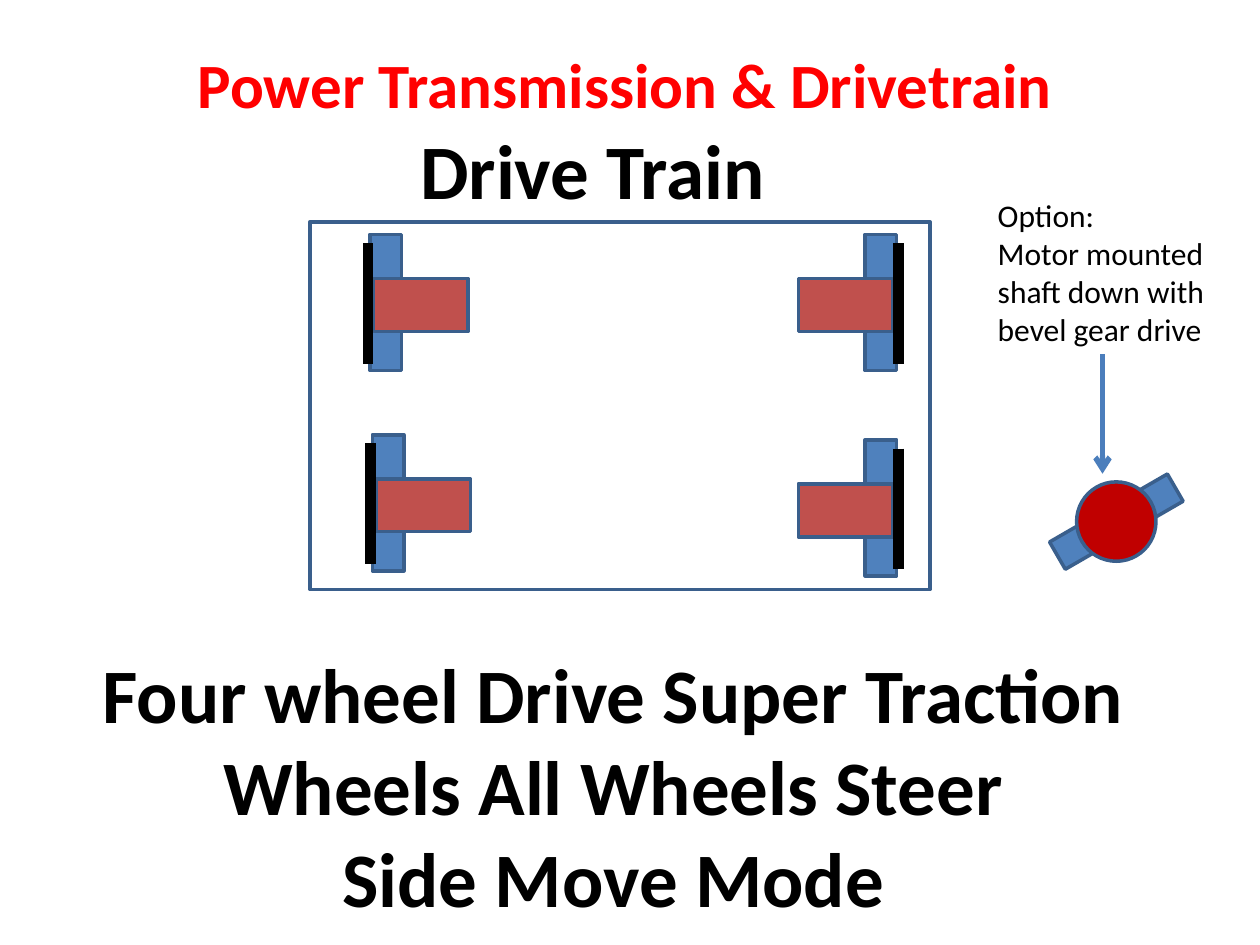
from pptx import Presentation
from pptx.dml.color import RGBColor
from pptx.enum.shapes import MSO_CONNECTOR as Line, MSO_SHAPE as Kind
from pptx.enum.text import MSO_ANCHOR as Anchor, PP_ALIGN as Align
from pptx.oxml.ns import qn
from pptx.util import Inches, Pt
from lxml import etree

COLORS = {"title": "FF0000", "text": "000000", "edge": "3A5F8C", "wheel": "4F81BD",
          "motor": "C0504D", "gear": "C00000", "bar": "000000", "arrow": "4B7EBC"}
WHEEL = (1.08, 0.25)
MOTOR = (0.42, 0.75)


def rgb(name):
    return RGBColor.from_string(COLORS[name])


def write(frame, lines, size, color="text", bold=True, align=Align.CENTER):
    frame.word_wrap = True
    frame.text = "\n".join(lines)
    for par in frame.paragraphs:
        par.alignment = align
        font = par.font
        font.name, font.size, font.bold = "Calibri", Pt(size), bold
        font.color.rgb = rgb(color)


def add_text(slide, box, lines, size, **style):
    text = slide.shapes.add_textbox(*map(Inches, box))
    write(text.text_frame, lines, size, **style)


def add_title(slide, box, text):
    title = slide.shapes.title
    title.left, title.top, title.width, title.height = map(Inches, box)
    write(title.text_frame, [text], 36, color="title")
    title.text_frame.vertical_anchor = Anchor.MIDDLE


def add_part(shapes, kind, mid, size, fill=None, turn=0):
    """Draw an outlined shape centred on mid, turned by degrees."""
    (x, y), (w, h) = mid, size
    part = shapes.add_shape(kind, *map(Inches, (x - w / 2, y - h / 2, w, h)))
    part.rotation = turn
    part.shadow.inherit = False
    part.line.color.rgb = rgb("edge")
    part.line.width = Pt(2)
    if fill:
        part.fill.solid()
        part.fill.fore_color.rgb = rgb(fill)
    else:
        part.fill.background()


def add_line(shapes, x, top, end, color, width, head=False):
    line = shapes.add_connector(Line.STRAIGHT, *map(Inches, (x, top, x, end)))
    line.line.color.rgb = rgb(color)
    line.line.width = Pt(width)
    if head:
        etree.SubElement(line.line._get_or_add_ln(), qn("a:tailEnd"), type="arrow")
    etree.SubElement(line._element.spPr, qn("a:effectLst"))


def add_drive(slide, x, y, side):
    """Group wheel, motor and bar; x is the bar, side 1 points the motor right."""
    shapes = slide.shapes.add_group_shape().shapes
    turn = 270 if side > 0 else 90
    add_part(shapes, Kind.RECTANGLE, (x + side * 0.14, y), WHEEL, "wheel", turn)
    add_part(shapes, Kind.RECTANGLE, (x + side * 0.42, y + 0.02), MOTOR, "motor", turn)
    add_line(shapes, x, y - 0.47, y + 0.49, "bar", 6)


def add_frame(slide, box):
    left, top, width, height = box
    add_part(slide.shapes, Kind.RECTANGLE,
             (left + width / 2, top + height / 2), (width, height))
    for x, y, side in ((0.46, 0.64, 1), (0.48, 2.23, 1),
                       (4.67, 2.27, -1), (4.67, 0.64, -1)):
        add_drive(slide, left + x, top + y, side)


def add_option(slide, box):
    left, top, width, height = box
    mid = left + 1.04, top + 2.63
    add_part(slide.shapes, Kind.RECTANGLE, mid, WHEEL, "wheel", 330)
    add_part(slide.shapes, Kind.OVAL, mid, (0.63, 0.63), "gear")
    add_text(slide, (left, top, width, 1.31),
             ["Option:", "Motor mounted shaft down with bevel gear drive"],
             18, bold=False, align=Align.LEFT)
    add_line(slide.shapes, left + 0.93, top + 1.3, top + 2.25, "arrow", 3, head=True)


def main():
    deck = Presentation()
    deck.slide_width, deck.slide_height = Inches(10), Inches(7.5)
    slide = deck.slides.add_slide(deck.slide_layouts[5])
    add_text(slide, (0.79, 0.92, 7.83, 0.84), ["Drive Train"], 44)
    add_title(slide, (0.17, 0.25, 9.58, 0.83), "Power Transmission & Drivetrain")
    add_frame(slide, (2.46, 1.76, 4.92, 2.92))
    add_text(slide, (0.59, 5.08, 8.56, 2.32),
             ["Four wheel Drive Super Traction Wheels All Wheels Steer",
              "Side Move Mode"], 44)
    add_option(slide, (7.82, 1.51, 2.01, 3.05))
    deck.save("out.pptx")


if __name__ == "__main__":
    main()
